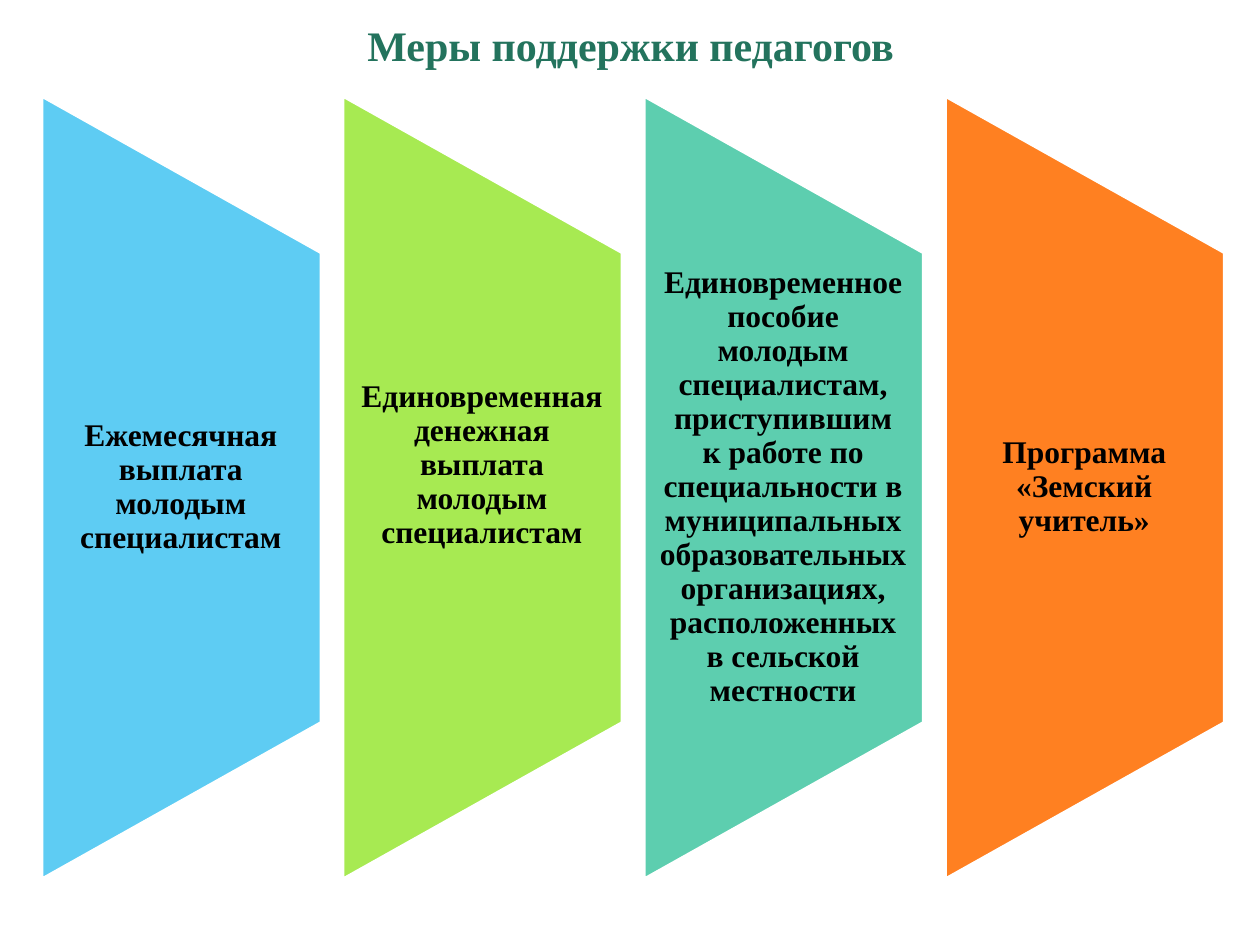
from dataclasses import dataclass

import pptx
import pptx.dml.color
import pptx.enum.shapes
import pptx.enum.text
import pptx.util

Inches = pptx.util.Inches
Pt = pptx.util.Pt


@dataclass(frozen=True)
class Theme:
    font: str = "Times New Roman"
    title_size: int = 24
    label_size: int = 18
    title_color: str = "23735D"
    label_color: str = "000000"
    outline: str = "FFFFFF"


THEME = Theme()
FIRST_LEFT, COLUMN_STEP, COLUMN_WIDTH = 0.33, 2.39, 2.22
PANEL_HEIGHT, LABEL_HEIGHT, MIDDLE = 6.22, 3.73, 3.87

# Label, panel colour, bottom inset that lifts the label
MEASURES = [
    ("Ежемесячная выплата молодым специалистам", "5ECCF3", 0),
    ("Единовременная денежная выплата молодым специалистам", "A7EA52", 0.36),
    ("Единовременное пособие молодым специалистам, приступившим\v"
     "к работе по специальности в муниципальных образовательных "
     "организациях, расположенных в сельской местности", "5DCEAF", 0),
    ("Программа «Земский учитель»", "FF8021", 0),
]


def rgb(code):
    return pptx.dml.color.RGBColor.from_string(code)


def style_paragraph(paragraph, size, color):
    paragraph.alignment = pptx.enum.text.PP_ALIGN.CENTER
    paragraph.font.name = THEME.font
    paragraph.font.size = Pt(size)
    paragraph.font.bold = True
    paragraph.font.color.rgb = rgb(color)


def add_title(slide, wording):
    title = slide.shapes.title
    title.left, title.top = Inches(0.16), Inches(0)
    title.width, title.height = Inches(9.69), Inches(0.71)
    title.text_frame.text = wording
    title.text_frame.vertical_anchor = pptx.enum.text.MSO_ANCHOR.MIDDLE
    style_paragraph(title.text_frame.paragraphs[0], THEME.title_size, THEME.title_color)


def add_panel(slide, left, color):
    """Draw a trapezoid turned on its side, so its long edge faces left."""
    center = left + COLUMN_WIDTH / 2
    panel = slide.shapes.add_shape(
        pptx.enum.shapes.MSO_SHAPE.FLOWCHART_MANUAL_OPERATION,
        Inches(center - PANEL_HEIGHT / 2), Inches(MIDDLE - COLUMN_WIDTH / 2),
        Inches(PANEL_HEIGHT), Inches(COLUMN_WIDTH))
    panel.rotation = 270
    panel.shadow.inherit = False
    panel.fill.solid()
    panel.fill.fore_color.rgb = rgb(color)
    panel.line.color.rgb = rgb(THEME.outline)
    panel.line.width = Pt(2)


def add_label(slide, left, wording, bottom_inset):
    label = slide.shapes.add_textbox(
        Inches(left), Inches(MIDDLE - LABEL_HEIGHT / 2),
        Inches(COLUMN_WIDTH), Inches(LABEL_HEIGHT))
    frame = label.text_frame
    frame.word_wrap = True
    frame.vertical_anchor = pptx.enum.text.MSO_ANCHOR.MIDDLE
    frame.margin_left, frame.margin_right = Inches(0.12), Inches(0.13)
    frame.margin_top, frame.margin_bottom = 0, Inches(bottom_inset)
    frame.text = wording
    paragraph = frame.paragraphs[0]
    paragraph.line_spacing = 0.9
    style_paragraph(paragraph, THEME.label_size, THEME.label_color)


def main():
    deck = pptx.Presentation()
    deck.slide_width, deck.slide_height = Inches(10), Inches(7.5)
    slide = deck.slides.add_slide(deck.slide_layouts.get_by_name("Title Only"))
    add_title(slide, "Меры поддержки педагогов")
    for column, (wording, color, bottom_inset) in enumerate(MEASURES):
        left = FIRST_LEFT + column * COLUMN_STEP
        add_panel(slide, left, color)
        add_label(slide, left, wording, bottom_inset)
    deck.save("out.pptx")


if __name__ == "__main__":
    main()
